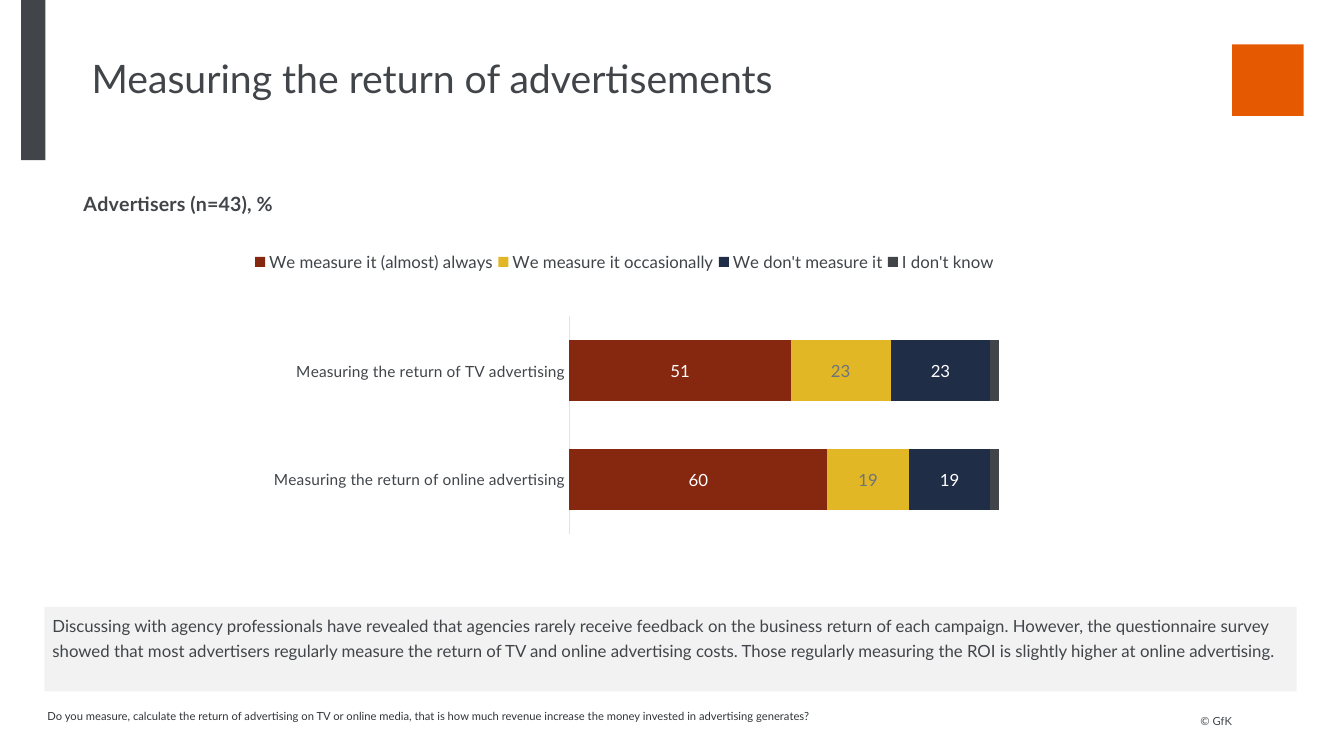
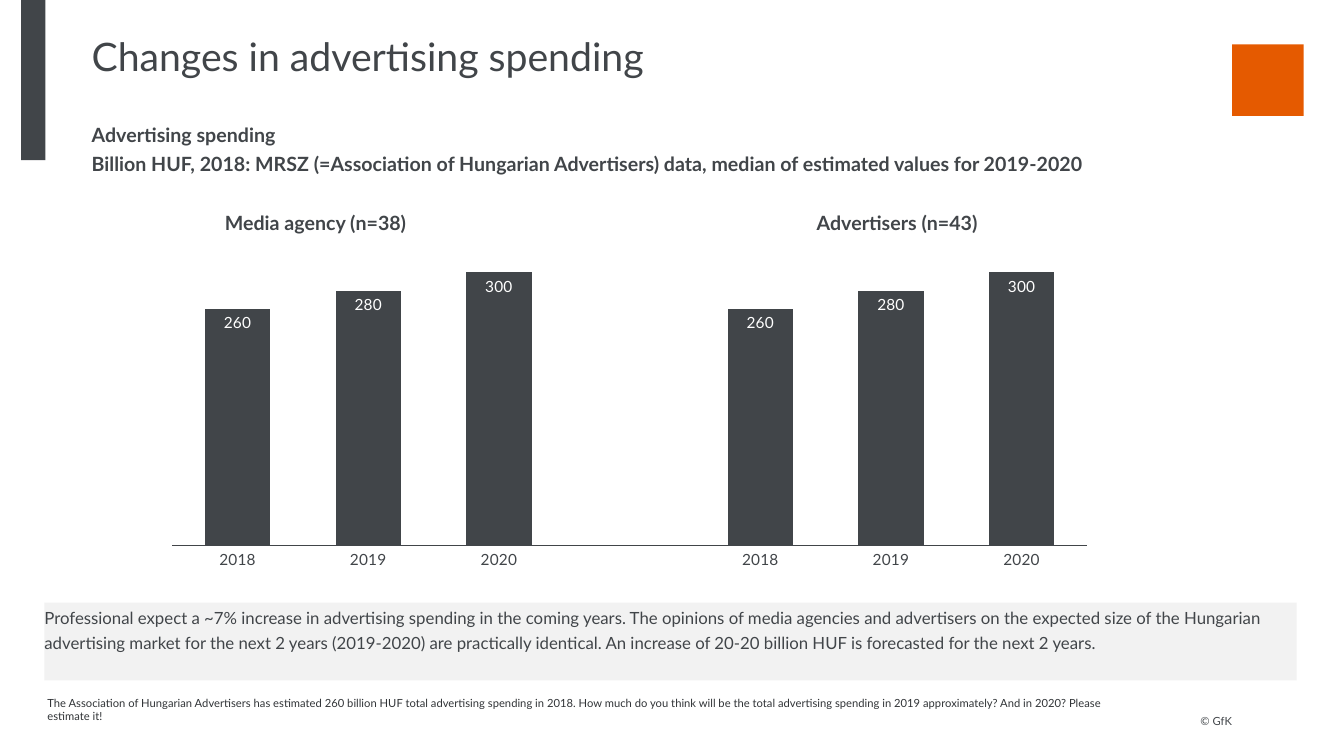
"""Build two slides on advertising returns and spending."""
from dataclasses import dataclass

from lxml import etree
from pptx import Presentation
from pptx.chart.chart import Chart
from pptx.chart.data import CategoryChartData
from pptx.dml.color import RGBColor
from pptx.enum.chart import XL_CHART_TYPE, XL_LABEL_POSITION, XL_LEGEND_POSITION, XL_TICK_MARK
from pptx.enum.shapes import MSO_SHAPE
from pptx.enum.text import MSO_ANCHOR, PP_ALIGN
from pptx.oxml.ns import qn
from pptx.slide import Slide
from pptx.util import Inches, Pt

RECT = MSO_SHAPE.RECTANGLE
TOP, BOTTOM = MSO_ANCHOR.TOP, MSO_ANCHOR.BOTTOM
LEFT, RIGHT = PP_ALIGN.LEFT, PP_ALIGN.RIGHT
STACKED, COLUMN = XL_CHART_TYPE.BAR_STACKED_100, XL_CHART_TYPE.COLUMN_CLUSTERED
IN_END = XL_LABEL_POSITION.INSIDE_END
LEG_TOP = XL_LEGEND_POSITION.TOP
NO_TICK = XL_TICK_MARK.NONE

FONT = "Lato"
DARK, INK, WHITE = "414549", "313437", "FFFFFF"
ORANGE, PALE, GREY, RULE = "E55A00", "F2F2F2", "6D747A", "E1E3E5"
RED, GOLD, NAVY = "85280F", "E2B726", "202D46"


@dataclass(frozen=True)
class Box:
    left: float
    top: float
    width: float
    height: float

    def spot(self) -> tuple:
        return tuple(Inches(v) for v in (self.left, self.top, self.width, self.height))


@dataclass(frozen=True)
class Style:
    size: float
    tint: str = DARK
    bold: bool = False
    lead: float = 1.0
    align: int = LEFT
    anchor: int = TOP


@dataclass(frozen=True)
class Series:
    name: str
    vals: tuple
    fill: str
    label: str = ""


TITLE = Style(28)
HEAD = Style(14, bold=True, lead=1.25)
BODY = Style(12, lead=1.25)
NOTE = Style(8, INK, anchor=BOTTOM)
MARK = Style(8, lead=1.25, align=RIGHT, anchor=BOTTOM)


def tone(code: str) -> RGBColor:
    return RGBColor.from_string(code)


def set_font(font, style: Style) -> None:
    font.name = FONT
    font.size = Pt(style.size)
    font.bold = style.bold
    font.color.rgb = tone(style.tint)


def write(shape, lines: tuple, style: Style, pads: tuple = (0, 0, 0, 0)) -> None:
    frame = shape.text_frame
    frame.word_wrap = True
    frame.vertical_anchor = style.anchor
    frame.margin_left, frame.margin_top, frame.margin_right, frame.margin_bottom = map(Inches, pads)
    for i, line in enumerate(lines):
        para = frame.add_paragraph() if i else frame.paragraphs[0]
        para.text = line
        para.alignment = style.align
        para.line_spacing = style.lead
        set_font(para.font, style)


def add_text(slide: Slide, box: Box, style: Style, *lines: str, pads: tuple = (0, 0, 0, 0)) -> None:
    write(slide.shapes.add_textbox(*box.spot()), lines, style, pads)


def add_rect(slide: Slide, box: Box, fill: str):
    shape = slide.shapes.add_shape(RECT, *box.spot())
    shape.shadow.inherit = False
    shape.fill.solid()
    shape.fill.fore_color.rgb = tone(fill)
    shape.line.fill.background()
    return shape


def add_panel(slide: Slide, box: Box, text: str, pads: tuple = (0, 0, 0, 0)) -> None:
    write(add_rect(slide, box, PALE), (text,), BODY, pads)


def start(deck, title: str, top: float, note: str, wide: float) -> Slide:
    slide = deck.slides.add_slide(deck.slide_layouts[6])
    add_rect(slide, Box(12.22, 0.44, 0.71, 0.71), ORANGE)
    add_rect(slide, Box(0.21, 0, 0.24, 1.59), DARK)
    add_text(slide, Box(11.67, 7.07, 0.55, 0.15), MARK, "© GfK")
    add_text(slide, Box(0.91, top, 9, 0.84), TITLE, title)
    add_text(slide, Box(0.47, 6.73, wide, 0.49), NOTE, note, pads=(0, 0, 0, 0.05))
    return slide


def place(node, index: int, **parts: float) -> None:
    for old in node.findall(qn("c:layout")):
        node.remove(old)
    layout = etree.Element(qn("c:layout"))
    manual = etree.SubElement(layout, qn("c:manualLayout"))
    if index == 0:
        etree.SubElement(manual, qn("c:layoutTarget")).set("val", "inner")
    for key in ("x", "y"):
        etree.SubElement(manual, qn(f"c:{key}Mode")).set("val", "edge")
    for key, val in parts.items():
        etree.SubElement(manual, qn(f"c:{key}")).set("val", str(val))
    node.insert(index, layout)


def add_chart(slide: Slide, kind: int, box: Box, cats: tuple, rows: tuple,
              top: float, gap: int, lap: int, rule: str, size: float) -> Chart:
    data = CategoryChartData()
    data.categories = cats
    for row in rows:
        data.add_series(row.name, row.vals)
    chart = slide.shapes.add_chart(kind, *box.spot(), data).chart
    set_font(chart.font, Style(11))
    chart.has_title = chart.has_legend = False
    values = chart.value_axis
    values.visible = values.has_major_gridlines = False
    values.minimum_scale, values.maximum_scale = 0, top
    axis = chart.category_axis
    axis.major_tick_mark = axis.minor_tick_mark = NO_TICK
    axis.format.line.color.rgb = tone(rule)
    axis.format.line.width = Pt(0.75)
    set_font(axis.tick_labels.font, Style(11))
    plot = chart.plots[0]
    plot.gap_width, plot.overlap, plot.vary_by_categories = gap, lap, False
    for row, bar in zip(rows, plot.series):
        bar.format.fill.solid()
        bar.format.fill.fore_color.rgb = tone(row.fill)
        if row.label:
            labels = bar.data_labels
            labels.show_value = True
            labels.number_format, labels.number_format_is_linked = "0", False
            set_font(labels.font, Style(size, row.label))
    return chart


def add_return(deck) -> None:
    slide = start(
        deck, "Measuring the return of advertisements", 0.54,
        "Do you measure, calculate the return of advertising on TV or online media, that is how much "
        "revenue increase the money invested in advertising generates?", 10.77)
    rows = (
        Series("We measure it (almost) always", (51, 60), RED, WHITE),
        Series("We measure it occasionally", (23, 19), GOLD, GREY),
        Series("We don't measure it", (23, 19), NAVY, WHITE),
        Series("I don't know", (2, 2), DARK),
    )
    cats = ("Measuring the return of TV advertising", "Measuring the return of online advertising")
    chart = add_chart(slide, STACKED, Box(0, 1.54, 9.91, 4.32), cats, rows, 1, 80, 100, RULE, 12)
    chart.category_axis.reverse_order = True
    chart.has_title = chart.has_legend = True
    title, legend = chart.chart_title, chart.legend
    title.include_in_layout = legend.include_in_layout = False
    title.text_frame.text = "Advertisers (n=43), %"
    set_font(title.text_frame.paragraphs[0].font, HEAD)
    legend.position = LEG_TOP
    set_font(legend.font, BODY)
    place(title._element, 1, x=0.08, y=0.07)
    place(legend._element, 1, x=0.25, y=0.2, w=0.76, h=0.09)
    place(chart._chartSpace.chart.plotArea, 0, x=0.57, y=0.37, w=0.43, h=0.5)
    add_panel(
        slide, Box(0.44, 6.02, 12.42, 0.84),
        "Discussing with agency professionals have revealed that agencies rarely receive feedback on the "
        "business return of each campaign. However, the questionnaire survey showed that most advertisers "
        "regularly measure the return of TV and online advertising costs. Those regularly measuring the "
        "ROI is slightly higher at online advertising.", (0.08, 0.04, 0.08, 0))


def add_spend(deck) -> None:
    slide = start(
        deck, "Changes in advertising spending", 0.32,
        "The Association of Hungarian Advertisers has estimated 260 billion HUF total advertising "
        "spending in 2018. How much do you think will be the total advertising spending in 2019 "
        "approximately? And in 2020? Please estimate it!", 10.73)
    add_text(
        slide, Box(0.91, 1.16, 11, 0.6), HEAD, "Advertising spending",
        "Billion HUF, 2018: MRSZ (=Association of Hungarian Advertisers) data, median of estimated "
        "values for 2019-2020")
    add_panel(
        slide, Box(0.44, 5.98, 12.42, 0.77),
        "Professional expect a ~7% increase in advertising spending in the coming years. The opinions of "
        "media agencies and advertisers on the expected size of the Hungarian advertising market for the "
        "next 2 years (2019-2020) are practically identical. An increase of 20-20 billion HUF is "
        "forecasted for the next 2 years.")
    years, sums = ("2018", "2019", "2020"), (260, 280, 300)
    rows = (Series("Series 1", (*sums, None, *sums), DARK, WHITE),)
    chart = add_chart(slide, COLUMN, Box(1.52, 2.18, 9.45, 3.53), (*years, "", *years), rows,
                      350, 100, -10, DARK, 11)
    chart.plots[0].series[0].data_labels.position = IN_END
    for left, text in ((2.23, "Media agency (n=38)"), (8.1, "Advertisers (n=43)")):
        add_text(slide, Box(left, 2.03, 2.37, 0.35), HEAD, text)


def main() -> None:
    deck = Presentation()
    deck.slide_width, deck.slide_height = Inches(13.33), Inches(7.5)
    add_return(deck)
    add_spend(deck)
    deck.save("out.pptx")


if __name__ == "__main__":
    main()
